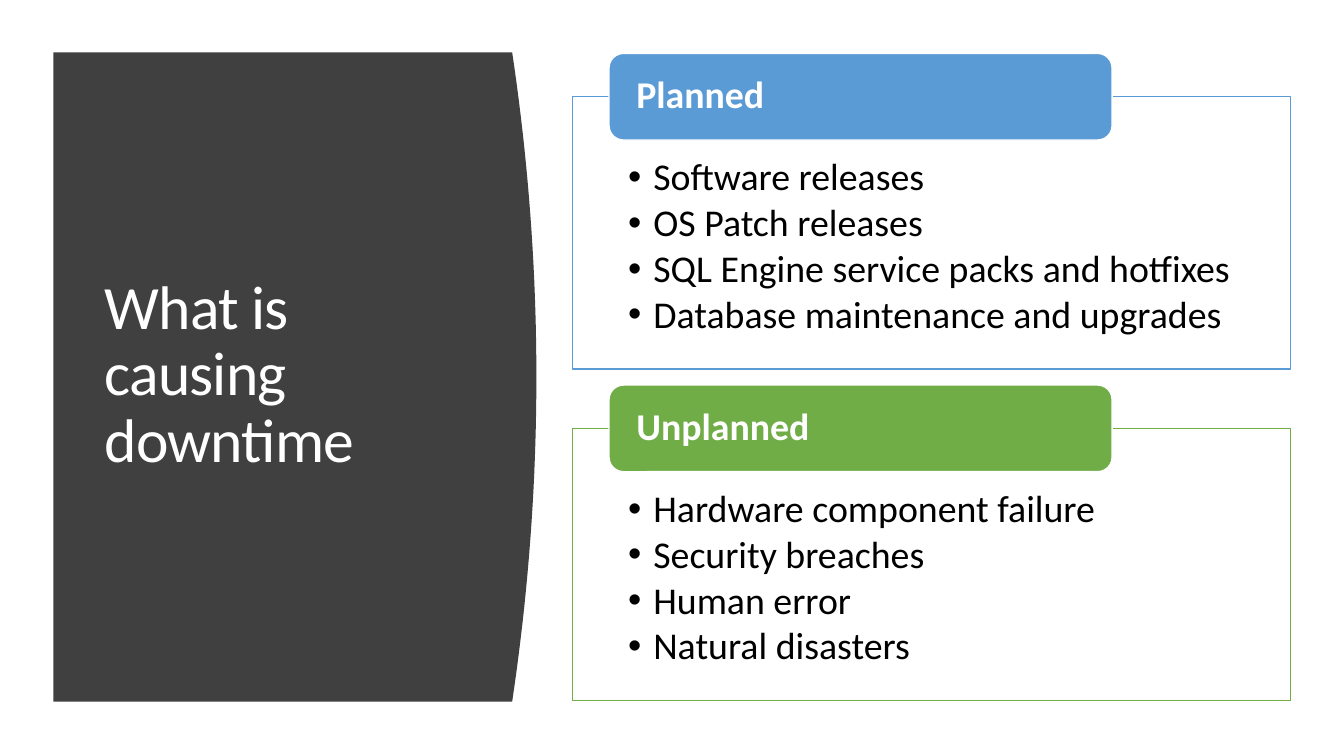
from lxml import etree
from pptx import Presentation
from pptx.dml.color import RGBColor
from pptx.enum.shapes import MSO_SHAPE
from pptx.enum.text import MSO_ANCHOR, PP_ALIGN
from pptx.oxml.ns import qn
from pptx.util import Inches, Pt

RECTANGLE, ROUNDED = MSO_SHAPE.RECTANGLE, MSO_SHAPE.ROUNDED_RECTANGLE
TOP, MIDDLE = MSO_ANCHOR.TOP, MSO_ANCHOR.MIDDLE
LEFT = PP_ALIGN.LEFT

TITLE = "What is causing downtime"
CAUSES = [
    ("Planned", "blue", [
        "Software releases",
        "OS Patch releases",
        "SQL Engine service packs and hotfixes",
        "Database maintenance and upgrades",
    ]),
    ("Unplanned", "green", [
        "Hardware component failure",
        "Security breaches",
        "Human error",
        "Natural disasters",
    ]),
]
COLORS = {"dark": "404040", "white": "FFFFFF", "black": "000000",
          "blue": "5B9BD5", "green": "70AD47"}
FONTS = {
    "title": {"name": "Calibri", "size": Pt(44)},
    "heading": {"name": "Calibri", "size": Pt(27), "bold": True},
    "bullet": {"name": "Calibri", "size": Pt(27)},
}
MARGINS = ("margin_left", "margin_top", "margin_right", "margin_bottom")

BAND_LEFT, BAND_TOP, BAND_BOTTOM = 0.53, 0.52, 6.96
BAND_RIGHT, BULGE, CURVE_STEPS = 5.08, 0.24, 40
PANEL_LEFT, PANEL_TOP, PANEL_WIDTH, PANEL_HEIGHT = 5.68, 0.96, 7.12, 2.7
TAB_LEFT, TAB_TOP, TAB_WIDTH, TAB_HEIGHT = 6.04, 0.53, 4.99, 0.86
PANEL_PITCH = 3.29


def color(name):
    """Return the named colour."""
    return RGBColor.from_string(COLORS[name])


def write_text(shape, lines, style, text_color, margins, anchor):
    """Write one styled paragraph per line."""
    frame = shape.text_frame
    frame.word_wrap = True
    frame.vertical_anchor = anchor
    for name, value in zip(MARGINS, margins):
        setattr(frame, name, Inches(value))
    for index, line in enumerate(lines):
        paragraph = frame.paragraphs[0] if index == 0 else frame.add_paragraph()
        paragraph.alignment = LEFT
        paragraph.line_spacing = 0.9
        run = paragraph.add_run()
        run.text = line
        run.font.color.rgb = color(text_color)
        for name, value in FONTS[style].items():
            setattr(run.font, name, value)
    return frame.paragraphs


def add_band(slide):
    """Draw the dark band whose right edge is a parabola."""
    middle, half = (BAND_TOP + BAND_BOTTOM) / 2, (BAND_BOTTOM - BAND_TOP) / 2
    edge = []
    for step in range(CURVE_STEPS + 1):
        offset = 2 * step / CURVE_STEPS - 1
        edge.append((Inches(BAND_RIGHT + BULGE * (1 - offset ** 2)),
                     Inches(middle + half * offset)))
    builder = slide.shapes.build_freeform(Inches(BAND_LEFT), Inches(BAND_TOP))
    builder.add_line_segments(edge + [(Inches(BAND_LEFT), Inches(BAND_BOTTOM))])
    band = builder.convert_to_shape()
    band.shadow.inherit = False
    band.fill.solid()
    band.fill.fore_color.rgb = color("dark")
    band.line.fill.background()


def add_box(slide, kind, box, fill, line):
    """Add a filled and outlined preset shape."""
    shape = slide.shapes.add_shape(kind, *map(Inches, box))
    shape.shadow.inherit = False
    shape.fill.solid()
    shape.fill.fore_color.rgb = color(fill)
    shape.line.color.rgb = color(line)
    shape.line.width = Pt(1)
    return shape


def add_cause(slide, index, heading, accent, bullets):
    """Add a bulleted panel with its heading tab."""
    shift = index * PANEL_PITCH
    panel = add_box(slide, RECTANGLE,
                    (PANEL_LEFT, PANEL_TOP + shift, PANEL_WIDTH, PANEL_HEIGHT),
                    "white", accent)
    fill_color = panel.fill._xPr.find(qn("a:solidFill"))[0]
    etree.SubElement(fill_color, qn("a:alpha"), val="90000")
    for paragraph in write_text(panel, bullets, "bullet", "black",
                                (0.55, 0.61, 0.55, 0.21), TOP):
        paragraph.space_after = Pt(3.5)
        properties = paragraph._p.get_or_add_pPr()
        properties.set("marL", str(Inches(0.25)))
        properties.set("indent", str(Inches(-0.25)))
        etree.SubElement(properties, qn("a:buFont"), typeface="Arial")
        etree.SubElement(properties, qn("a:buChar"), char="•")
    tab = add_box(slide, ROUNDED,
                  (TAB_LEFT, TAB_TOP + shift, TAB_WIDTH, TAB_HEIGHT),
                  accent, "white")
    write_text(tab, [heading], "heading", "white", (0.23, 0, 0.23, 0), MIDDLE)


def main():
    """Build and save the downtime slide."""
    presentation = Presentation()
    presentation.slide_width = Inches(13.33)
    presentation.slide_height = Inches(7.5)
    slide = presentation.slides.add_slide(presentation.slide_layouts[6])
    add_band(slide)
    title = slide.shapes.add_textbox(*map(Inches, (0.94, 1.11, 3.74, 5.24)))
    paragraphs = write_text(title, [TITLE], "title", "white",
                            (0.1, 0.05, 0.1, 0.05), MIDDLE)
    paragraphs[0].runs[0].font._element.set("spc", "-60")
    for index, cause in enumerate(CAUSES):
        add_cause(slide, index, *cause)
    presentation.save("out.pptx")


if __name__ == "__main__":
    main()
